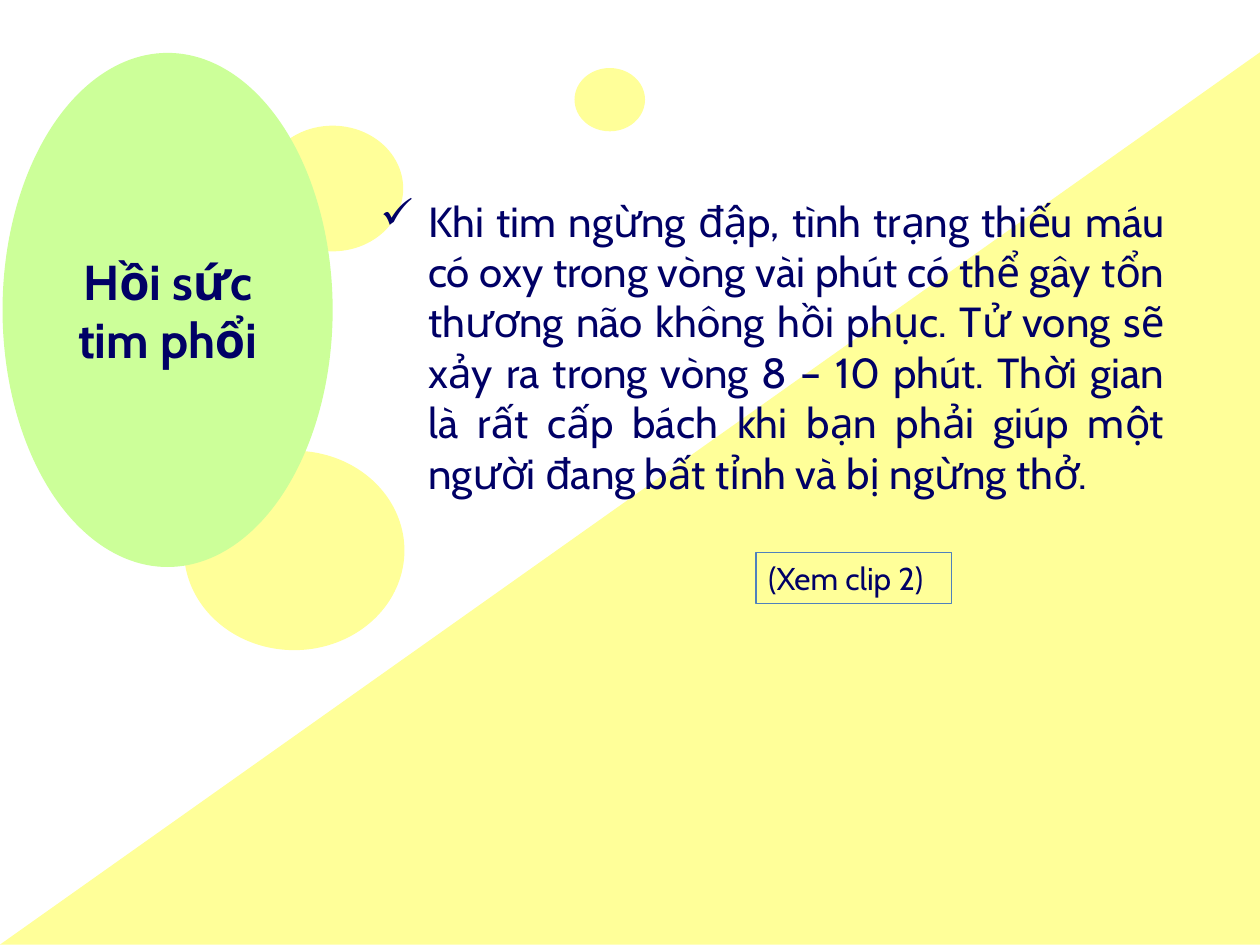
import pptx
import pptx.util
import pptx.dml.color
import pptx.enum.shapes
import pptx.enum.text
import pptx.oxml.ns
from lxml import etree

RGB = pptx.dml.color.RGBColor
YELLOW = RGB(0xFF, 0xFF, 0x99)
GREEN = RGB(0xCC, 0xFF, 0x99)
NAVY = RGB(0x00, 0x00, 0x66)
BLUE = RGB(0x4F, 0x81, 0xBD)
WIDE = pptx.util.Inches(10)
HIGH = pptx.util.Inches(7.5)
KIND = pptx.enum.shapes.MSO_SHAPE
ALIGN = pptx.enum.text.PP_ALIGN
ANCHOR = pptx.enum.text.MSO_ANCHOR
GROW = pptx.enum.text.MSO_AUTO_SIZE.SHAPE_TO_FIT_TEXT
BODY = (
    "Khi tim ngừng đập, tình trạng thiếu máu có oxy trong vòng vài phút "
    "có thể gây tổn thương não không hồi phục. Tử vong sẽ xảy ra trong "
    "vòng 8 – 10 phút. Thời gian là rất cấp bách khi bạn phải giúp một "
    "người đang bất tỉnh và bị ngừng thở."
)
BUBBLES = [
    (0.146, 0.477, 0.175, 0.211),
    (0.208, 0.133, 0.112, 0.133),
    (0.456, 0.072, 0.056, 0.067),
]


def place(x, y, w, h):
    return [int(x * WIDE), int(y * HIGH), int(w * WIDE), int(h * HIGH)]


def draw(slide, kind, box, fill=None, line=None):
    shape = slide.shapes.add_shape(kind, *place(*box))
    shape.shadow.inherit = False
    if fill is None:
        shape.fill.background()
    else:
        shape.fill.solid()
        shape.fill.fore_color.rgb = fill
    if line is None:
        shape.line.fill.background()
    else:
        shape.line.color.rgb = line
        shape.line.width = pptx.util.Pt(0.75)
    return shape


def write(shape, text, size, align, anchor=ANCHOR.TOP, bold=False, wrap=True):
    frame = shape.text_frame
    frame.word_wrap = wrap
    frame.vertical_anchor = anchor
    frame.text = text
    para = frame.paragraphs[0]
    para.alignment = align
    for run in para.runs:
        run.font.name = "Cabin"
        run.font.size = pptx.util.Pt(size)
        run.font.bold = bold
        run.font.color.rgb = NAVY
    return para


def tick(para):
    props = para._p.get_or_add_pPr()
    indent = int(pptx.util.Inches(0.38))
    props.set("marL", str(indent))
    props.set("indent", str(-indent))
    mark = etree.SubElement(props, pptx.oxml.ns.qn("a:buChar"))
    mark.set("char", "✓")


def main():
    deck = pptx.Presentation()
    deck.slide_width, deck.slide_height = WIDE, HIGH
    slide = deck.slides.add_slide(deck.slide_layouts[6])

    for box in BUBBLES:
        draw(slide, KIND.OVAL, box, YELLOW)
    slope = draw(slide, KIND.RIGHT_TRIANGLE, (0.146, -0.139, 0.708, 1.333), YELLOW)
    slope.rotation = 270

    body = slide.shapes.add_textbox(*place(0.292, 0.2, 0.642, 0.39))
    tick(write(body, BODY, 24, ALIGN.JUSTIFY))
    body.text_frame.auto_size = GROW

    title = draw(slide, KIND.OVAL, (0.002, 0.056, 0.262, 0.544), GREEN)
    write(title, "Hồi sức tim phổi", 28, ALIGN.CENTER, ANCHOR.MIDDLE, bold=True)

    clip = draw(slide, KIND.RECTANGLE, (0.6, 0.585, 0.155, 0.054), line=BLUE)
    write(clip, "(Xem clip 2)", 18, ALIGN.JUSTIFY, wrap=False)
    clip.text_frame.auto_size = GROW

    deck.save("out.pptx")


if __name__ == "__main__":
    main()
